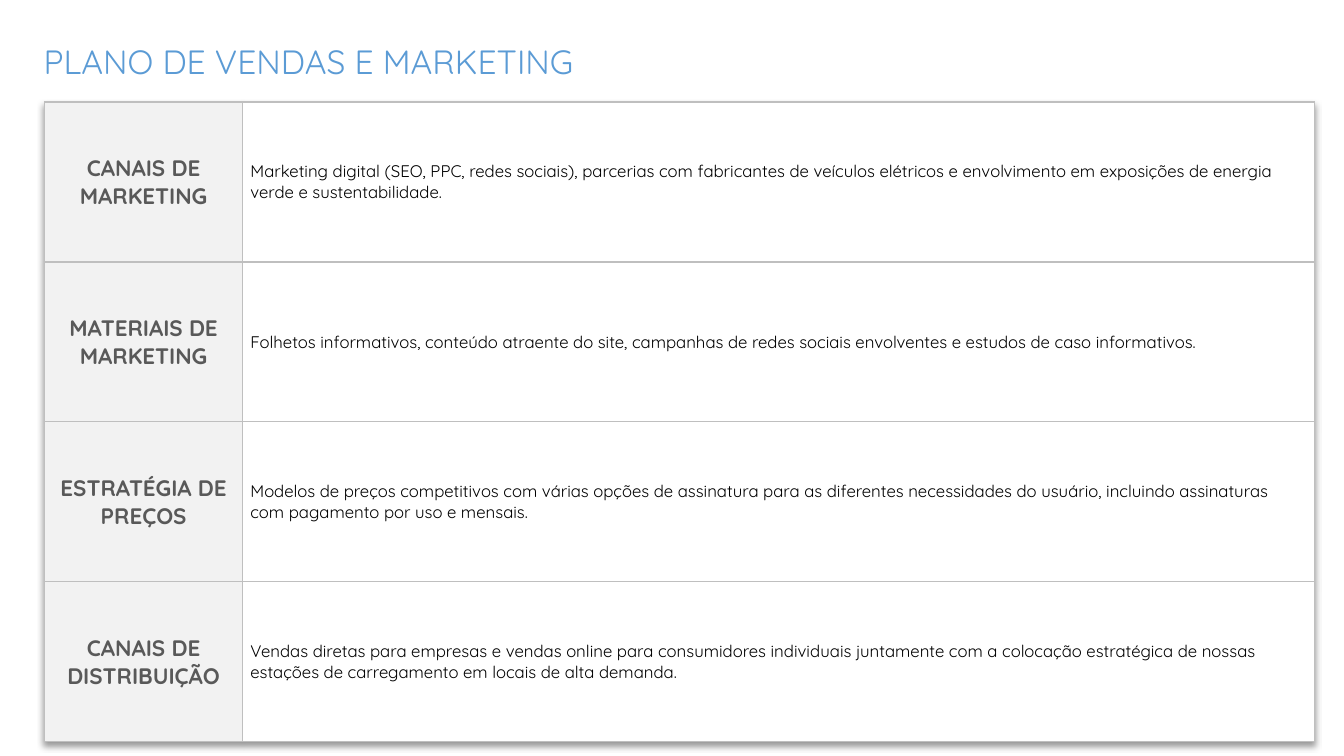
from lxml.etree import SubElement
from pptx import Presentation
from pptx.dml.color import RGBColor
from pptx.enum.text import MSO_ANCHOR, PP_ALIGN
from pptx.oxml import parse_xml
from pptx.oxml.ns import nsdecls, qn
from pptx.util import Cm, Pt

TITLE = "PLANO DE VENDAS E MARKETING"
PLAN = [
    ("CANAIS DE MARKETING",
     "Marketing digital (SEO, PPC, redes sociais), parcerias com fabricantes de veículos elétricos "
     "e envolvimento em exposições de energia verde e sustentabilidade."),
    ("MATERIAIS DE MARKETING",
     "Folhetos informativos, conteúdo atraente do site, campanhas de redes sociais envolventes "
     "e estudos de caso informativos."),
    ("ESTRATÉGIA DE PREÇOS",
     "Modelos de preços competitivos com várias opções de assinatura para as diferentes necessidades "
     "do usuário, incluindo assinaturas com pagamento por uso e mensais."),
    ("CANAIS DE DISTRIBUIÇÃO",
     "Vendas diretas para empresas e vendas online para consumidores individuais juntamente com a "
     "colocação estratégica de nossas estações de carregamento em locais de alta demanda."),
]
FONT = "Quicksand"
COLORS = {"title": "5B9BD5", "label": "595959", "text": "000000",
          "label_fill": "F2F2F2", "text_fill": "FFFFFF", "border": "BFBFBF"}
COL_WIDTHS = (5, 27)
ROW_HEIGHT = 4.03


def write(tf, text, size, color, bold=False, align=PP_ALIGN.LEFT):
    tf.text = text
    tf.word_wrap = True
    p = tf.paragraphs[0]
    p.alignment = align
    font = p.runs[0].font
    font.name, font.size, font.bold = FONT, Pt(size), bold
    font.color.rgb = RGBColor.from_string(COLORS[color])


def style_cell(cell, fill, inset):
    cell.vertical_anchor = MSO_ANCHOR.MIDDLE
    cell.margin_left = cell.margin_right = Cm(inset)
    cell.fill.solid()
    cell.fill.fore_color.rgb = RGBColor.from_string(COLORS[fill])
    tc_pr = cell._tc.get_or_add_tcPr()
    for i, side in enumerate(("lnL", "lnR", "lnT", "lnB")):
        ln = SubElement(tc_pr, qn(f"a:{side}"), w=str(Pt(1)))
        solid = SubElement(ln, qn("a:solidFill"))
        SubElement(solid, qn("a:srgbClr"), val=COLORS["border"])
        tc_pr.insert(i, ln)


prs = Presentation()
prs.slide_width, prs.slide_height = Cm(33.87), Cm(19.05)
s = prs.slides.add_slide(prs.slide_layouts[6])

title = s.shapes.add_textbox(Cm(0.85), Cm(0.9), Cm(20.52), Cm(1.28))
write(title.text_frame, TITLE, 24, "title")

frame = s.shapes.add_table(len(PLAN), 2, Cm(1.12), Cm(2.57),
                           Cm(sum(COL_WIDTHS)), Cm(ROW_HEIGHT * len(PLAN)))
table = frame.table
table.first_row = table.horz_banding = False
table._tbl.tblPr.insert(0, parse_xml(
    f'<a:effectLst {nsdecls("a")}><a:outerShdw blurRad="50800" dist="38100" dir="5400000" '
    'algn="t" rotWithShape="0"><a:srgbClr val="000000"><a:alpha val="40000"/></a:srgbClr>'
    '</a:outerShdw></a:effectLst>'))
for col, width in zip(table.columns, COL_WIDTHS):
    col.width = Cm(width)

for i, (label, text) in enumerate(PLAN):
    table.rows[i].height = Cm(ROW_HEIGHT)
    label_cell, text_cell = table.cell(i, 0), table.cell(i, 1)
    write(label_cell.text_frame, label, 16, "label", True, PP_ALIGN.CENTER)
    style_cell(label_cell, "label_fill", 0.25)
    write(text_cell.text_frame, text, 12, "text")
    style_cell(text_cell, "text_fill", 0.19)
    text_cell.margin_top = text_cell.margin_bottom = 0

prs.save("out.pptx")
